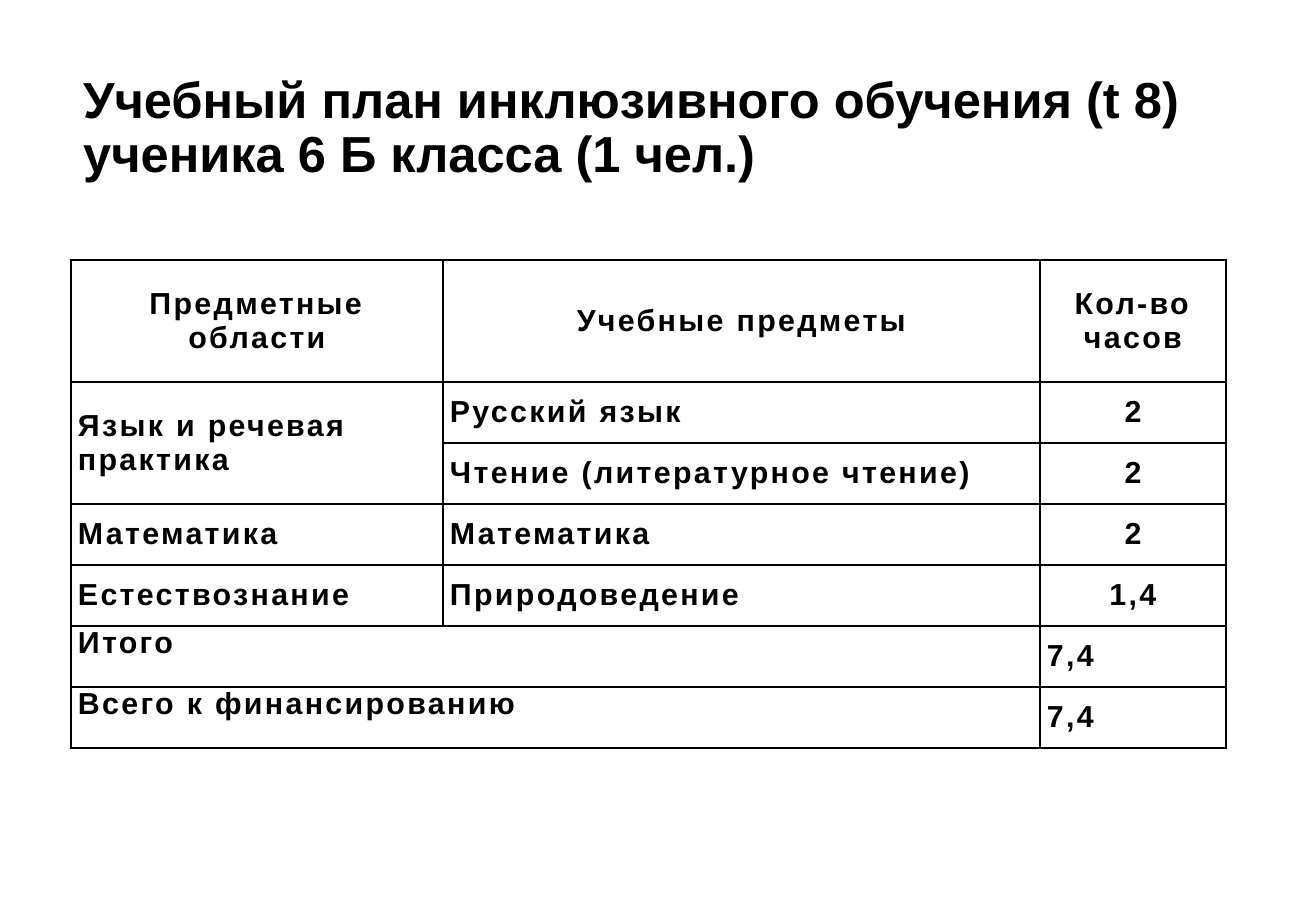
"""Builds the slide with the inclusive education curriculum of a class 6 Б pupil."""
from lxml import etree
from pptx import Presentation, util as u
from pptx.dml.color import RGBColor
from pptx.enum import text
from pptx.oxml.ns import qn

PX = 914400 / 121.5
COLORS = {"ink": "000000", "paper": "FFFFFF"}
LEFT, MIDDLE = text.PP_ALIGN.LEFT, text.MSO_ANCHOR.MIDDLE
CENTER, TOP = text.PP_ALIGN.CENTER, text.MSO_ANCHOR.TOP


def px(count):
    return u.Emu(round(count * PX))


def add_text(paragraph, words, size):
    run = paragraph.add_run()
    run.text = words
    run.font.name = "Arial"
    run.font.size = u.Pt(size)
    run.font.bold = True
    run.font.color.rgb = RGBColor.from_string(COLORS["ink"])
    return run


deck = Presentation()
deck.slide_width, deck.slide_height = px(1316), px(911)
slide = deck.slides.add_slide(deck.slide_layouts[5])
slide.background.fill.solid()
slide.background.fill.fore_color.rgb = RGBColor.from_string(COLORS["paper"])

heading = slide.shapes.title
heading.left, heading.top, heading.width, heading.height = px(71), px(49), px(1154), px(160)
heading.text_frame.vertical_anchor = MIDDLE
heading.text_frame.word_wrap = True
heading.text_frame.auto_size = text.MSO_AUTO_SIZE.NONE
heading_line = heading.text_frame.paragraphs[0]
heading_line.alignment = LEFT
heading_line.line_spacing = 0.9
add_text(heading_line, "Учебный план инклюзивного обучения (t 8)", 30)
heading_line.add_line_break()
add_text(heading_line, "ученика 6 Б класса (1 чел.)", 30)

plan = [
    ("Предметные области", "Учебные предметы", "Кол-во часов"),
    ("Язык и речевая практика", "Русский язык", "2"),
    ("", "Чтение (литературное чтение)", "2"),
    ("Математика", "Математика", "2"),
    ("Естествознание", "Природоведение", "1,4"),
    ("Итого", "", "7,4"),
    ("Всего к финансированию", "", "7,4"),
]
column_widths = [372, 597, 186]
row_heights = [122] + [61] * 6
first_total = 5

curriculum = slide.shapes.add_table(
    len(plan), len(column_widths), px(71), px(260), px(sum(column_widths)), px(sum(row_heights))
).table
for column, width in zip(curriculum.columns, column_widths):
    column.width = px(width)
for row, height in zip(curriculum.rows, row_heights):
    row.height = px(height)

for r, subjects in enumerate(plan):
    for c, words in enumerate(subjects):
        cell = curriculum.cell(r, c)
        cell.margin_left = cell.margin_right = px(7)
        cell.margin_top = cell.margin_bottom = 0
        cell.vertical_anchor = TOP if r >= first_total and c < 2 else MIDDLE
        cell.fill.background()
        borders = cell._tc.get_or_add_tcPr()
        for position, side in enumerate(("lnL", "lnR", "lnT", "lnB")):
            border = etree.Element(qn(f"a:{side}"), w=str(u.Pt(1)))
            ink = etree.SubElement(border, qn("a:solidFill"))
            etree.SubElement(ink, qn("a:srgbClr"), val=COLORS["ink"])
            borders.insert(position, border)
        if words:
            line = cell.text_frame.paragraphs[0]
            line.alignment = CENTER if r == 0 or (c == 2 and r < first_total) else LEFT
            run = add_text(line, words, 18)
            run.font._element.set("spc", "140")

curriculum.cell(1, 0).merge(curriculum.cell(2, 0))
for r in range(first_total, len(plan)):
    curriculum.cell(r, 0).merge(curriculum.cell(r, 1))

deck.save("out.pptx")
